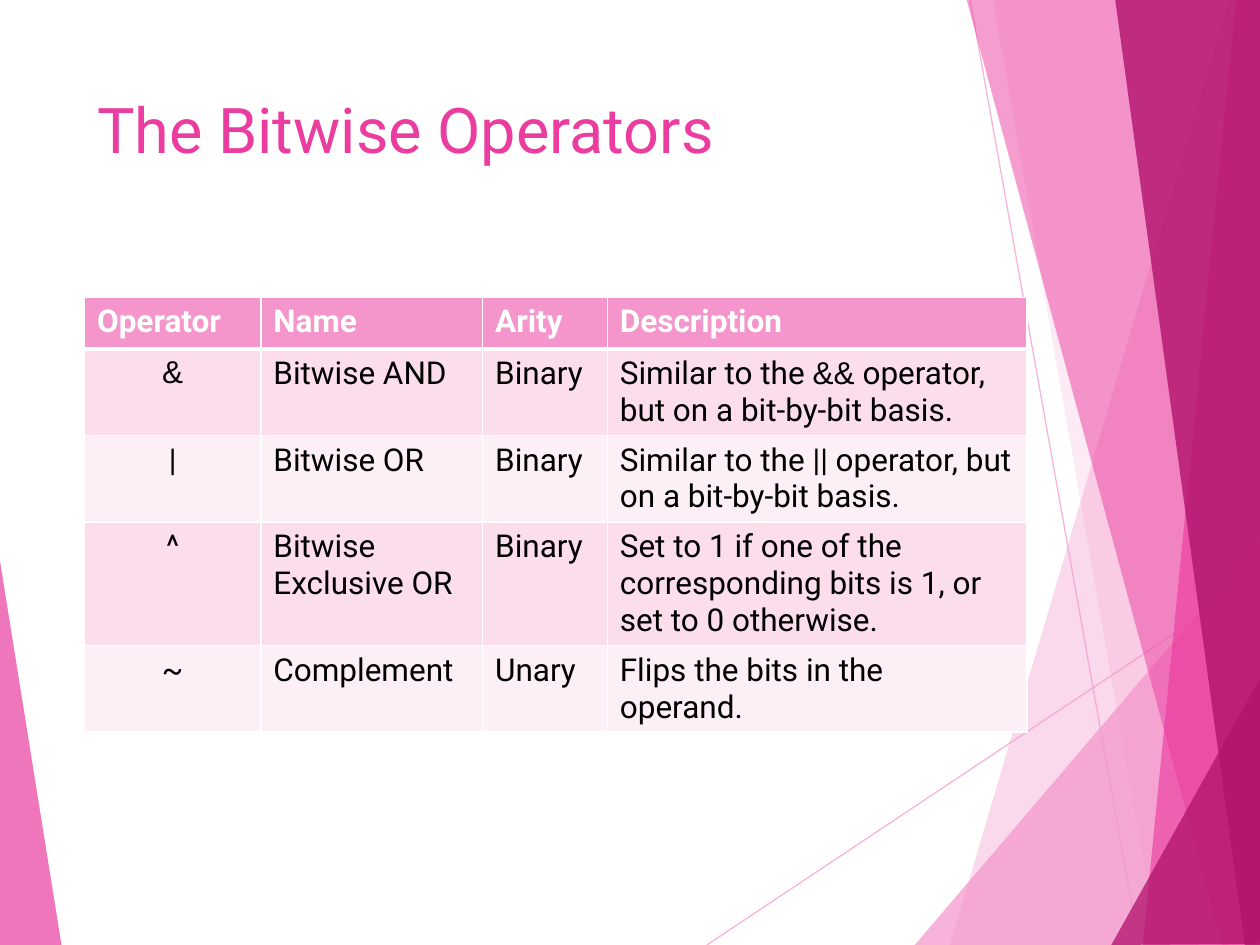
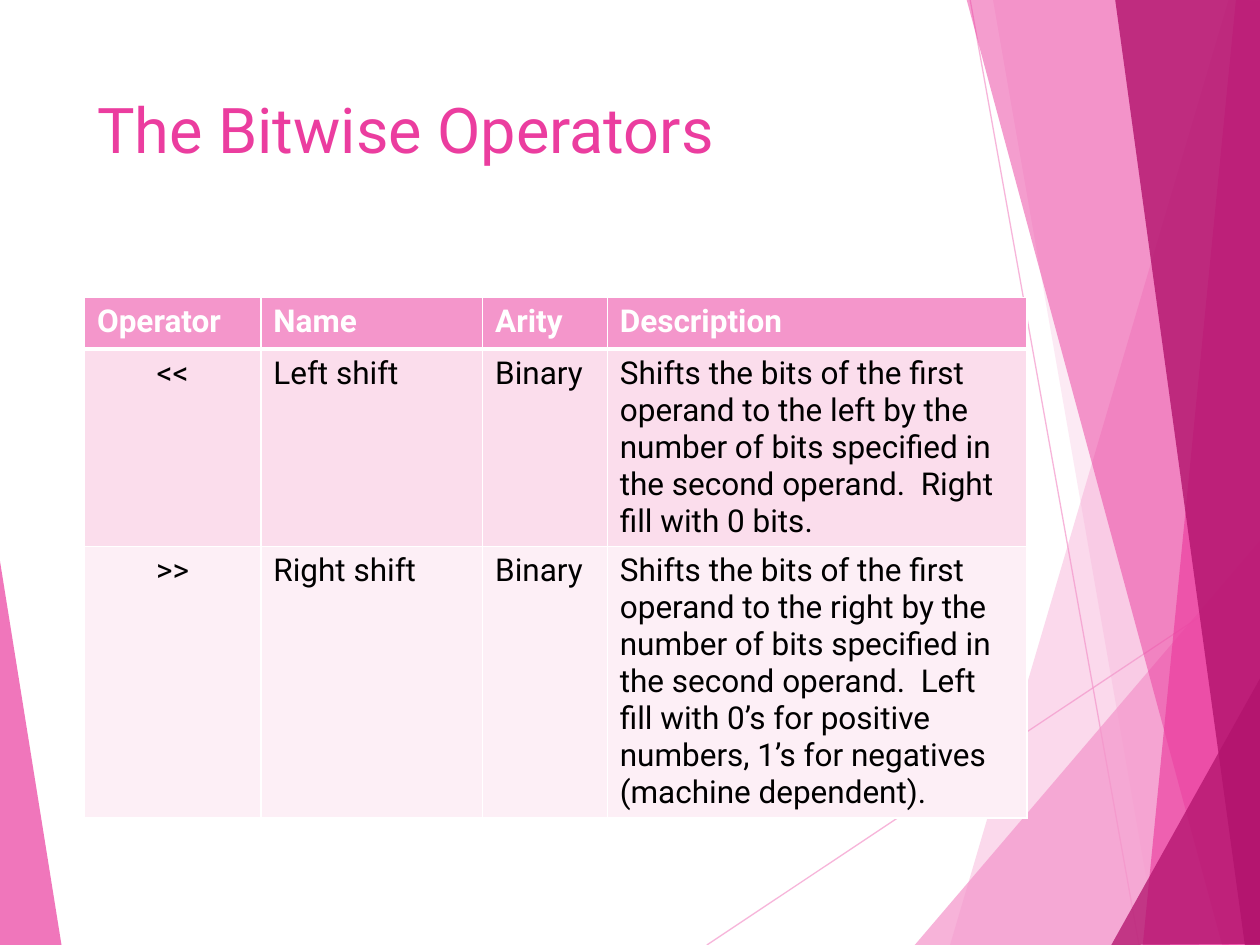
from itertools import groupby

from lxml import etree
from pptx import Presentation
from pptx.dml.color import RGBColor
from pptx.enum.shapes import MSO_CONNECTOR
from pptx.enum.text import MSO_ANCHOR, MSO_AUTO_SIZE, PP_ALIGN
from pptx.oxml.ns import qn
from pptx.util import Inches, Pt

STRAIGHT = MSO_CONNECTOR.STRAIGHT
TOP = MSO_ANCHOR.TOP
NO_AUTOFIT = MSO_AUTO_SIZE.NONE
LEFT, CENTER = PP_ALIGN.LEFT, PP_ALIGN.CENTER

WHITE = RGBColor(0xFF, 0xFF, 0xFF)
BLACK = RGBColor(0x00, 0x00, 0x00)
LIGHT_PINK = RGBColor(0xF4, 0x96, 0xCB)
PINK = RGBColor(0xEB, 0x3D, 0x9F)
DEEP_PINK = RGBColor(0xB2, 0x13, 0x6D)
ODD_ROW = RGBColor(0xFB, 0xDD, 0xEC)
EVEN_ROW = RGBColor(0xFD, 0xEF, 0xF6)

TEXT_FONT = "Roboto"
AMPERSAND_FONT = "Arial"
TITLE = "The Bitwise Operators"
TITLE_ONLY = 5
FIRST_DECORATION_ID = 100

HAIRLINES = [(5.61, 7.5, 10.01, 4.57), (7.7, 0, 9.04, 7.5)]

# Corner points are in hundredths of an inch.
FACETS = [
    (LIGHT_PINK, 36, [(975, 0), (754, 750), (1002, 751), (1001, 1)]),
    (LIGHT_PINK, 20, [(788, -1), (919, 750), (1001, 750), (1001, -1)]),
    (LIGHT_PINK, 72, [(726, 750), (1000, 429), (1001, 750)]),
    (PINK, 50, [(767, -1), (970, 750), (1001, 749), (1001, -1)]),
    (PINK, 66, [(981, -1), (907, 750), (1001, 750), (1000, -1)]),
    (DEEP_PINK, 80, [(885, -1), (988, 750), (1002, 750), (1000, -1)]),
    (DEEP_PINK, 76, [(882, 750), (1002, 535), (1002, 749)]),
    (PINK, 70, [(-1, 439), (49, 751), (-1, 750)]),
]

COLUMN_WIDTHS = [1.4, 1.76, 0.99, 3.33]
ROW_HEIGHT = 0.41
HEADINGS = ("Operator", "Name", "Arity", "Description")
LOGICAL_OPERATORS = [
    ("&", "Bitwise AND", "Binary",
     "Similar to the && operator, but on a bit-by-bit basis."),
    ("|", "Bitwise OR", "Binary",
     "Similar to the || operator, but on a bit-by-bit basis."),
    ("^", "Bitwise Exclusive OR", "Binary",
     "Set to 1 if one of the corresponding bits is 1, or set to 0 otherwise."),
    ("~", "Complement", "Unary", "Flips the bits in the operand."),
]
SHIFT_OPERATORS = [
    ("<<", "Left shift", "Binary",
     "Shifts the bits of the first operand to the left by the number of bits "
     "specified in the second operand.  Right fill with 0 bits."),
    (">>", "Right shift", "Binary",
     "Shifts the bits of the first operand to the right by the number of bits "
     "specified in the second operand.  Left fill with 0’s for positive "
     "numbers, 1’s for negatives (machine dependent)."),
]


def set_opacity(element, percent):
    color = element.find(".//" + qn("a:srgbClr"))
    etree.SubElement(color, qn("a:alpha"), val=str(percent * 1000))


def add_hairline(page, left, top, right, bottom):
    line = page.shapes.add_connector(
        STRAIGHT, Inches(left), Inches(top), Inches(right), Inches(bottom))
    line.line.color.rgb = LIGHT_PINK
    line.line.width = Pt(0.75)
    properties = line.element.spPr
    set_opacity(properties, 70)
    etree.SubElement(properties, qn("a:effectLst"))
    return line


def add_facet(page, color, opacity, points):
    builder = page.shapes.build_freeform(*points[0], scale=Inches(0.01))
    builder.add_line_segments(points[1:], close=True)
    facet = builder.convert_to_shape()
    facet.shadow.inherit = False
    facet.fill.solid()
    facet.fill.fore_color.rgb = color
    set_opacity(facet.element.spPr, opacity)
    facet.line.fill.background()
    return facet


def decorate_layout(page):
    decorations = [add_hairline(page, *ends) for ends in HAIRLINES]
    decorations += [add_facet(page, *facet) for facet in FACETS]
    layout_tree = page.slide_layout.shapes.element
    for index, shape in enumerate(decorations):
        label = shape.element.find(".//" + qn("p:cNvPr"))
        label.set("id", str(FIRST_DECORATION_ID + index))
        layout_tree.insert(2 + index, shape.element)


def write_text(frame, text, size, color, bold=False, align=LEFT):
    para = frame.paragraphs[0]
    para.alignment = align
    for is_ampersand, letters in groupby(text, key=lambda letter: letter == "&"):
        span = para.add_run()
        span.text = "".join(letters)
        span.font.name = AMPERSAND_FONT if is_ampersand else TEXT_FONT
        span.font.size = Pt(size)
        span.font.bold = bold
        span.font.color.rgb = color


def add_title(page, text):
    title = page.shapes.title
    title.left, title.top = Inches(0.67), Inches(0.67)
    title.width, title.height = Inches(6.94), Inches(1.44)
    frame = title.text_frame
    frame.word_wrap = True
    frame.auto_size = NO_AUTOFIT
    frame.vertical_anchor = TOP
    write_text(frame, text, 36, PINK)


def set_borders(cell, bottom_width):
    properties = cell._tc.get_or_add_tcPr()
    widths = {"lnL": 1, "lnR": 1, "lnT": 1, "lnB": bottom_width}
    for side, width in widths.items():
        border = etree.SubElement(properties, qn("a:" + side), w=str(Pt(width)))
        fill = etree.SubElement(border, qn("a:solidFill"))
        etree.SubElement(fill, qn("a:srgbClr"), val=str(WHITE))


def format_cell(cell, text, fill, color, bold, align, bottom_width):
    set_borders(cell, bottom_width)
    cell.fill.solid()
    cell.fill.fore_color.rgb = fill
    write_text(cell.text_frame, text, 18, color, bold=bold, align=align)


def add_operator_table(page, operators, height):
    rows = [HEADINGS, *operators]
    frame = page.shapes.add_table(
        len(rows), len(HEADINGS), Inches(0.67), Inches(2.36),
        Inches(sum(COLUMN_WIDTHS)), Inches(height))
    table = frame.table
    table.horz_banding = False
    for column, width in zip(table.columns, COLUMN_WIDTHS):
        column.width = Inches(width)
    for row_index, texts in enumerate(rows):
        table.rows[row_index].height = Inches(ROW_HEIGHT)
        header = row_index == 0
        band = ODD_ROW if row_index % 2 else EVEN_ROW
        for column_index, text in enumerate(texts):
            format_cell(
                table.cell(row_index, column_index), text,
                fill=LIGHT_PINK if header else band,
                color=WHITE if header else BLACK,
                bold=header,
                align=CENTER if column_index == 0 and not header else LEFT,
                bottom_width=3 if header else 1)
    frame.height = Inches(height)


def main():
    deck = Presentation()
    deck.slide_width, deck.slide_height = Inches(10), Inches(7.5)
    layout = deck.slide_layouts[TITLE_ONLY]
    for operators, height in ((LOGICAL_OPERATORS, 3.51), (SHIFT_OPERATORS, 4.21)):
        page = deck.slides.add_slide(layout)
        add_title(page, TITLE)
        add_operator_table(page, operators, height)
    decorate_layout(deck.slides[0])
    deck.save("out.pptx")


if __name__ == "__main__":
    main()
